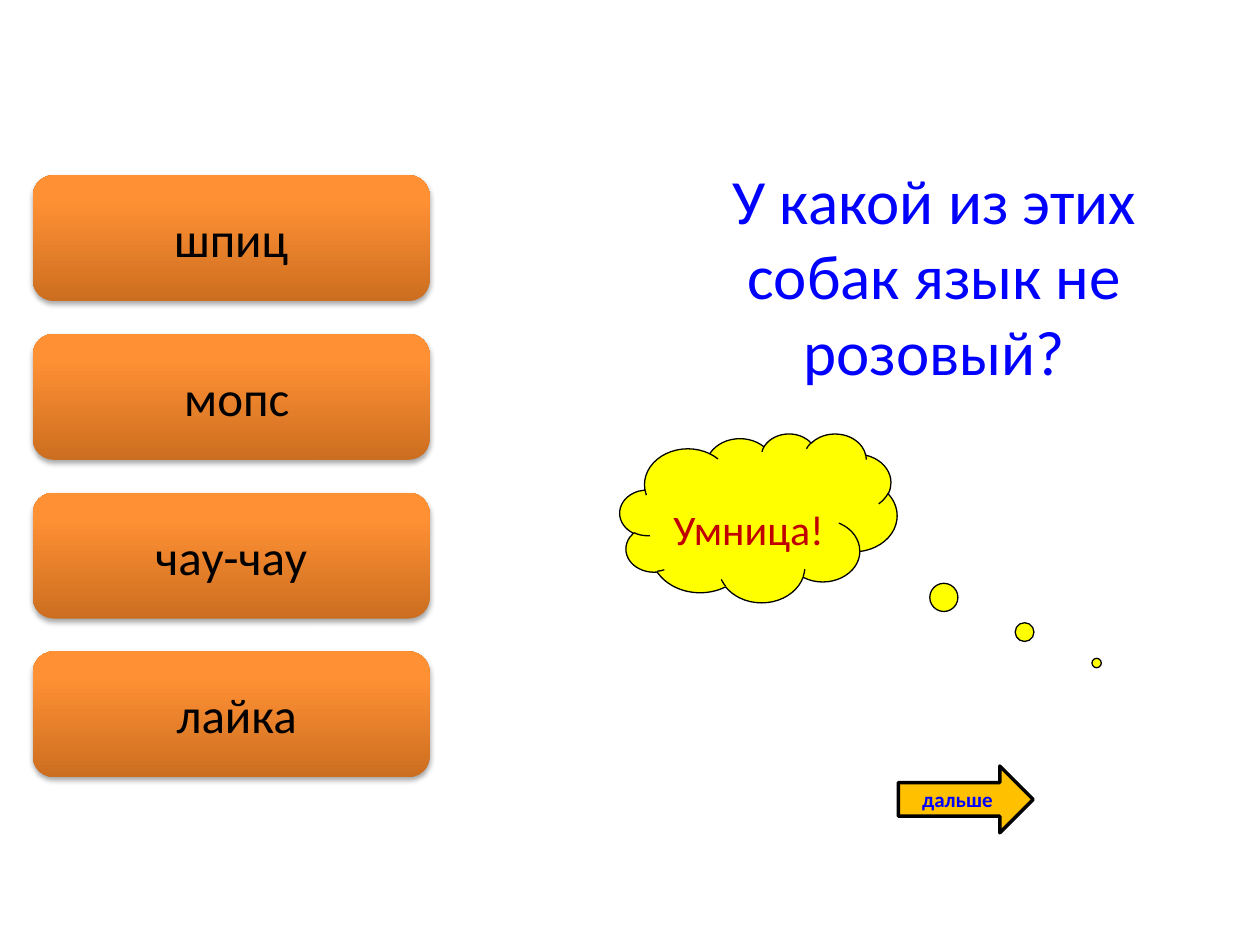
from dataclasses import dataclass, field

from lxml import etree
from pptx import Presentation
from pptx.dml.color import RGBColor
from pptx.enum import shapes, text
from pptx.oxml.ns import qn
from pptx.util import Inches, Pt

COLORS = {
    "blue": "0000FF",
    "red": "C00000",
    "black": "000000",
    "yellow": "FFFF00",
    "amber": "FFC000",
}
BUTTON_STOPS = ((0, "CC6E20"), (80, "FF9034"), (100, "FF9136"))


@dataclass
class Label:
    text: str
    size: float
    color: str
    bold: bool = False
    anchor: text.MSO_ANCHOR = text.MSO_ANCHOR.MIDDLE
    margin_top: float = 0.05


@dataclass
class Figure:
    kind: shapes.MSO_SHAPE
    box: tuple
    label: Label
    fill: str = ""
    line_width: float = 0
    adjustments: tuple = field(default=())


def write_label(sp, label: Label) -> None:
    """Put one centred paragraph into a shape or placeholder."""
    tf = sp.text_frame
    frame_format = {
        "word_wrap": True,
        "auto_size": text.MSO_AUTO_SIZE.NONE,
        "vertical_anchor": label.anchor,
        "margin_top": Inches(label.margin_top),
    }
    for name, value in frame_format.items():
        setattr(tf, name, value)
    p = tf.paragraphs[0]
    p.alignment = text.PP_ALIGN.CENTER
    r = p.add_run()
    r.text = label.text
    font_format = {"name": "Calibri", "size": Pt(label.size), "bold": label.bold}
    for name, value in font_format.items():
        setattr(r.font, name, value)
    r.font.color.rgb = RGBColor.from_string(COLORS[label.color])


def draw_figure(s, figure: Figure):
    sp = s.shapes.add_shape(figure.kind, *map(Inches, figure.box))
    sp.shadow.inherit = False
    for i, value in enumerate(figure.adjustments):
        sp.adjustments[i] = value
    if figure.fill:
        sp.fill.solid()
        sp.fill.fore_color.rgb = RGBColor.from_string(COLORS[figure.fill])
    if figure.line_width:
        sp.line.color.rgb = RGBColor.from_string(COLORS["black"])
        sp.line.width = Pt(figure.line_width)
    else:
        sp.line.fill.background()
    write_label(sp, figure.label)
    return sp


def add_color(parent, rgb: str):
    return etree.SubElement(parent, qn("a:srgbClr"), val=rgb)


def style_button(sp) -> None:
    """Give a button its three-stop gradient and soft shadow."""
    sp.fill.gradient()
    sp.fill.gradient_angle = 90
    stops = sp._element.spPr.find(".//" + qn("a:gsLst"))
    for stop in list(stops):
        stops.remove(stop)
    for percent, rgb in BUTTON_STOPS:
        add_color(etree.SubElement(stops, qn("a:gs"), pos=str(percent * 1000)), rgb)

    effects = sp._element.spPr.find(qn("a:effectLst"))
    shadow = etree.SubElement(
        effects, qn("a:outerShdw"), blurRad=str(Pt(3.1)), dist=str(Pt(1.8)),
        dir="5400000", rotWithShape="0")
    etree.SubElement(add_color(shadow, COLORS["black"]), qn("a:alpha"), val="35000")


def main() -> None:
    prs = Presentation()
    prs.slide_width, prs.slide_height = Inches(10), Inches(7.5)
    s = prs.slides.add_slide(prs.slide_layouts[5])

    # Question
    title = s.shapes.title
    title_box = {"left": 5.17, "top": 1.23, "width": 4.49, "height": 1.92}
    for name, value in title_box.items():
        setattr(title, name, Inches(value))
    write_label(title, Label("У какой из этих собак язык не розовый?", 36, "blue",
                             anchor=text.MSO_ANCHOR.TOP))

    # Praise cloud and next arrow
    draw_figure(s, Figure(
        shapes.MSO_SHAPE.CLOUD_CALLOUT, (4.92, 3.44, 2.2, 1.34),
        Label("Умница!", 24, "red", anchor=text.MSO_ANCHOR.TOP, margin_top=0.35),
        "yellow", 0.75, (1.22, 0.86)))
    draw_figure(s, Figure(
        shapes.MSO_SHAPE.RIGHT_ARROW, (7.13, 6.08, 1.07, 0.53),
        Label("дальше", 12, "blue", bold=True), "amber", 2))

    # Answer buttons
    for i, answer in enumerate(("шпиц", " мопс", "чау-чау", " лайка")):
        style_button(draw_figure(s, Figure(
            shapes.MSO_SHAPE.ROUNDED_RECTANGLE, (0.26, 1.39 + 1.26 * i, 3.15, 1),
            Label(answer, 28, "black"))))

    prs.save("out.pptx")


if __name__ == "__main__":
    main()
